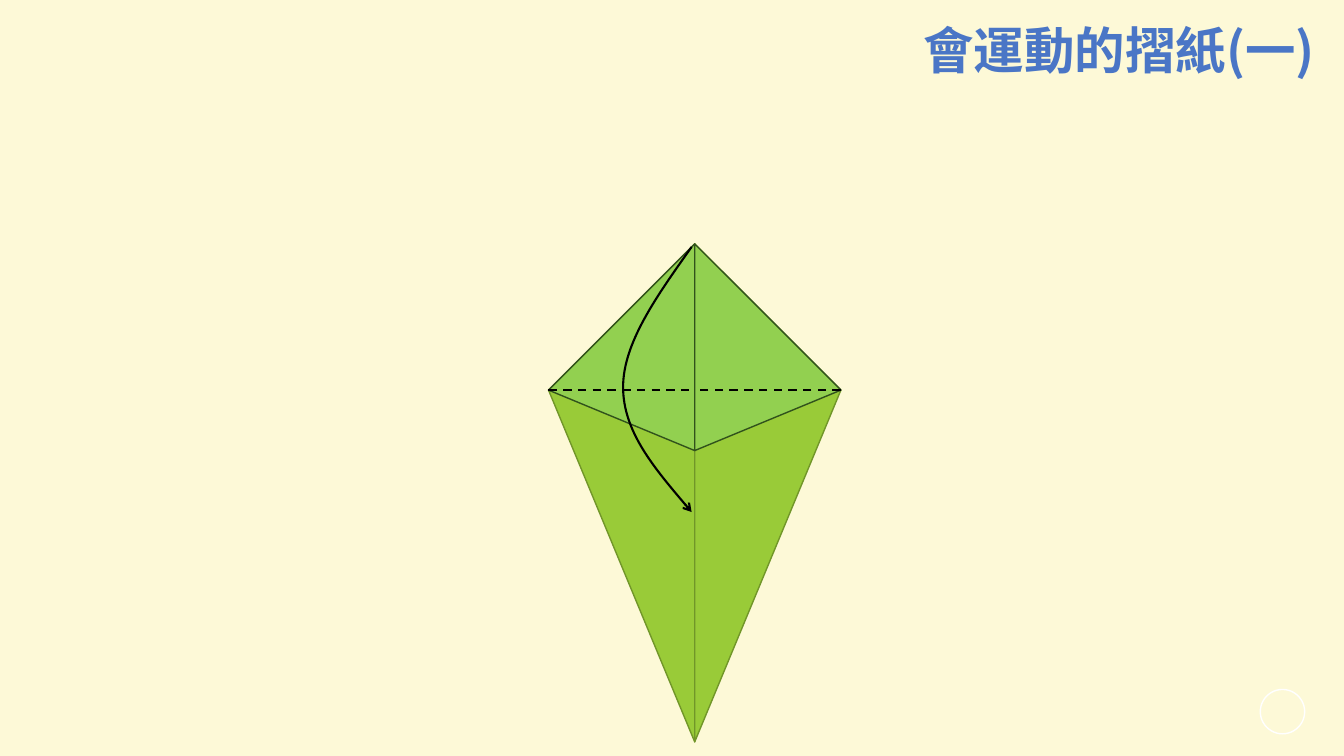
"""Build the origami folding slide with its diagram and title."""
from dataclasses import dataclass

from lxml.etree import SubElement
from pptx import Presentation
from pptx.dml.color import RGBColor
from pptx.enum.dml import MSO_LINE
from pptx.enum.shapes import MSO_CONNECTOR, MSO_SHAPE
from pptx.enum.text import MSO_ANCHOR, MSO_AUTO_SIZE, PP_ALIGN
from pptx.oxml.ns import qn
from pptx.util import Inches, Pt


@dataclass(frozen=True)
class Theme:
    background: str = "FDF9D7"
    title: str = "4A76C6"
    body: str = "99CB38"
    body_edge: str = "719629"
    flap: str = "92D050"
    flap_edge: str = "31521C"
    fold: str = "000000"
    ring: str = "FFFFFF"
    font: str = "Noto Sans CJK SC"
    title_size: int = 36
    edge_width: float = 1
    fold_width: float = 1.5


THEME = Theme()
TITLE = "會運動的摺紙(一)"
TITLE_BOX = (9.06, 0.21, 4.09, 0.71)
RING_BOX = (12.5, 6.84, 0.44, 0.44)

CENTER, HALF_WIDTH = 6.89, 1.45
TOP, FOLD, FLAP_TIP, BODY_TIP = 2.42, 3.87, 4.47, 7.36
LAYERS = [
    (BODY_TIP, THEME.body, THEME.body_edge),
    (FLAP_TIP, THEME.flap, THEME.flap_edge),
]
ARROW_START = (6.86, 2.45)
ARROW_CURVES = [
    [(6.52, 2.93), (6.18, 3.4), (6.18, 3.84)],
    [(6.18, 4.28), (6.52, 4.68), (6.86, 5.08)],
]


def emu(point):
    return tuple(Inches(value) for value in point)


def style_line(line, color, width):
    line.color.rgb = RGBColor.from_string(color)
    line.width = Pt(width)


def add_outline(slide, points, close=True):
    start, *others = map(emu, points)
    builder = slide.shapes.build_freeform(*start)
    builder.add_line_segments(others, close=close)
    shape = builder.convert_to_shape()
    shape.shadow.inherit = False
    return shape


def add_paper(slide, side, tip, fill, edge):
    corner = (CENTER + side * HALF_WIDTH, FOLD)
    paper = add_outline(slide, [(CENTER, TOP), corner, (CENTER, tip)])
    paper.fill.solid()
    paper.fill.fore_color.rgb = RGBColor.from_string(fill)
    style_line(paper.line, edge, THEME.edge_width)


def add_fold(slide, side):
    start = emu((CENTER + side * HALF_WIDTH, FOLD))
    fold = slide.shapes.add_connector(MSO_CONNECTOR.STRAIGHT, *start, *emu((CENTER, FOLD)))
    style_line(fold.line, THEME.fold, THEME.fold_width)
    fold.line.dash_style = MSO_LINE.DASH
    SubElement(fold._element.spPr, qn("a:effectLst"))


def add_arrow(slide):
    arrow = add_outline(slide, [ARROW_START] + [curve[-1] for curve in ARROW_CURVES], close=False)
    arrow.fill.background()
    style_line(arrow.line, THEME.fold, THEME.fold_width)
    SubElement(arrow.line._get_or_add_ln(), qn("a:tailEnd"), type="arrow")
    outline = arrow._element.spPr.find(".//" + qn("a:path"))
    for segment in outline.findall(qn("a:lnTo")):
        outline.remove(segment)
    for curve in ARROW_CURVES:
        segment = SubElement(outline, qn("a:cubicBezTo"))
        for x, y in map(emu, curve):
            SubElement(segment, qn("a:pt"), x=str(x - arrow.left), y=str(y - arrow.top))


def add_ring(slide):
    ring = slide.shapes.add_shape(MSO_SHAPE.OVAL, *emu(RING_BOX))
    ring.shadow.inherit = False
    ring.fill.background()
    style_line(ring.line, THEME.ring, THEME.edge_width)


def write_text(box, text, size, color, bold):
    frame = box.text_frame
    frame.word_wrap = True
    frame.auto_size = MSO_AUTO_SIZE.NONE
    frame.vertical_anchor = MSO_ANCHOR.TOP
    para = frame.paragraphs[0]
    para.alignment = PP_ALIGN.LEFT
    para.line_spacing = 0.9
    span = para.add_run()
    span.text = text
    span.font.size = Pt(size)
    span.font.bold = bold
    span.font.color.rgb = RGBColor.from_string(color)
    span.font.name = THEME.font
    SubElement(span._r.get_or_add_rPr(), qn("a:ea"), typeface=THEME.font)


def main():
    deck = Presentation()
    deck.slide_width, deck.slide_height = emu((13.33, 7.5))
    page = deck.slides.add_slide(deck.slide_layouts[5])
    page.background.fill.solid()
    page.background.fill.fore_color.rgb = RGBColor.from_string(THEME.background)

    title = page.shapes.title
    title.left, title.top, title.width, title.height = emu(TITLE_BOX)
    write_text(title, TITLE, size=THEME.title_size, color=THEME.title, bold=True)

    add_ring(page)
    for tip, fill, edge in LAYERS:
        for side in (-1, 1):
            add_paper(page, side, tip, fill, edge)
    for side in (1, -1):
        add_fold(page, side)
    add_arrow(page)
    deck.save("out.pptx")


if __name__ == "__main__":
    main()
